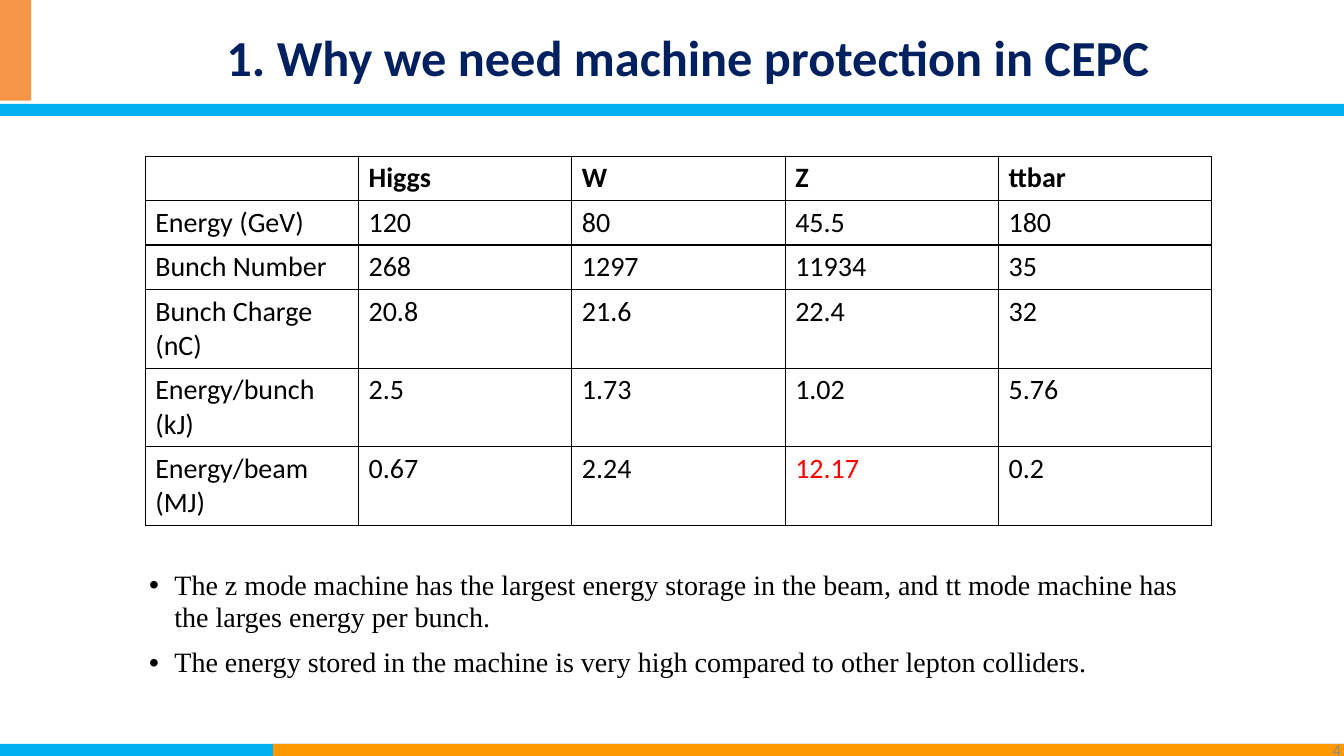
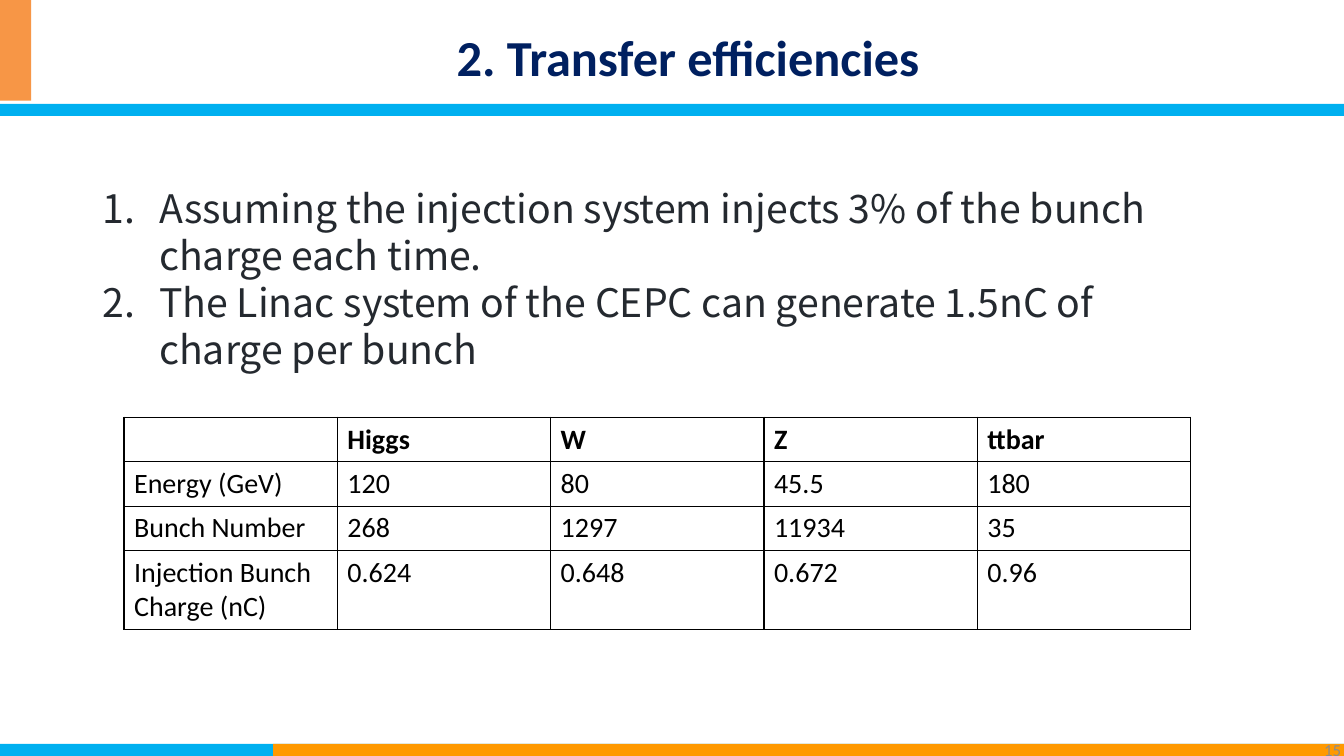
from dataclasses import dataclass

from lxml import etree
from pptx import Presentation
from pptx.dml.color import RGBColor
from pptx.enum.shapes import MSO_SHAPE
from pptx.enum.text import MSO_ANCHOR, MSO_AUTO_SIZE, PP_ALIGN
from pptx.oxml.ns import qn
from pptx.util import Inches, Pt

RECTANGLE = MSO_SHAPE.RECTANGLE
TOP, MIDDLE = MSO_ANCHOR.TOP, MSO_ANCHOR.MIDDLE
LEFT, CENTER, RIGHT = PP_ALIGN.LEFT, PP_ALIGN.CENTER, PP_ALIGN.RIGHT
NO_AUTOFIT = MSO_AUTO_SIZE.NONE


@dataclass(frozen=True)
class Theme:
    blue: str = "00B0F0"
    orange: str = "FF9900"
    accent: str = "F79646"
    navy: str = "002060"
    slate: str = "24292F"
    grey: str = "8C8C8C"
    black: str = "000000"
    red: str = "FF0000"
    sans: str = "Calibri"
    serif: str = "Times New Roman"
    wide: str = "Noto Sans CJK SC"
    title_size: int = 36
    list_size: int = 28
    text_size: int = 20
    number_size: int = 12
    border: float = 1


THEME = Theme()

# Content
MODES = ["", "Higgs", "W", "Z", "ttbar"]
COMMON_ROWS = [
    MODES,
    ["Energy (GeV)", "120", "80", "45.5", "180"],
    ["Bunch Number", "268", "1297", "11934", "35"],
]
SLIDES = [
    {
        "title": "1. Why we need machine protection in CEPC",
        "number": "4",
        "table_at": (1.44, 1.55),
        "rows": COMMON_ROWS + [
            ["Bunch Charge (nC)", "20.8", "21.6", "22.4", "32"],
            ["Energy/bunch (kJ)", "2.5", "1.73", "1.02", "5.76"],
            ["Energy/beam (MJ)", "0.67", "2.24", "12.17", "0.2"],
        ],
        "highlight": "12.17",
        "list_at": (1.38, 5.6, 10.58, 1.45),
        "items": [
            "The z mode machine has the largest energy storage in the beam, "
            "and tt mode machine has the larges energy per bunch.",
            "The energy stored in the machine is very high compared to "
            "other lepton colliders.",
        ],
        "list_style": {
            "font": THEME.serif, "size": THEME.text_size, "color": THEME.black,
            "indent": 0.25, "line": 0.95, "gap": 10,
            "marker": ("a:buChar", {"char": "•"}), "marker_font": "Arial",
        },
    },
    {
        "title": "2. Transfer efficiencies",
        "number": "15",
        "table_at": (1.23, 4.14),
        "rows": COMMON_ROWS + [
            ["Injection Bunch Charge (nC)", "0.624", "0.648", "0.672", "0.96"],
        ],
        "highlight": None,
        "list_at": (0.92, 1.78, 11.03, 2.2),
        "items": [
            "Assuming the injection system injects 3% of the bunch charge each time.",
            "The Linac system of the CEPC can generate 1.5nC of charge per bunch",
        ],
        "list_style": {
            "font": THEME.wide, "size": THEME.list_size, "color": THEME.slate,
            "indent": 0.56, "line": Pt(33.6), "gap": 0,
            "marker": ("a:buAutoNum", {"type": "arabicPeriod"}),
            "marker_font": THEME.wide,
        },
    },
]

# Shared geometry, in inches
PAGE_WIDTH, PAGE_HEIGHT = 13.33, 7.5
BAND = 0.12
BANDS = [
    (0, PAGE_HEIGHT - BAND, PAGE_WIDTH, BAND, THEME.blue),
    (2.71, PAGE_HEIGHT - BAND, PAGE_WIDTH - 2.71, BAND, THEME.orange),
    (0, 1.03, PAGE_WIDTH, BAND, THEME.blue),
    (0, 0, 0.31, 1, THEME.accent),
]
TITLE_AT = (1.39, 0.21, 10.87, 0.71)
NUMBER_AT = (12.89, 7.24, 0.51, 0.4)
TABLE_WIDTH = 10.58
ONE_LINE, TWO_LINES = 0.44, 0.77
LONGEST_LINE = 14  # characters that fit in a label cell


def inches(values):
    return [Inches(value) for value in values]


def place(shape, at):
    shape.left, shape.top, shape.width, shape.height = inches(at)


def add_span(para, text, font, size, color, bold=False):
    span = para.add_run()
    span.text = text
    span.font.name = font
    span.font.size = Pt(size)
    span.font.bold = bold
    span.font.color.rgb = RGBColor.from_string(color)


def set_frame(frame, anchor):
    frame.word_wrap = True
    frame.auto_size = NO_AUTOFIT
    frame.vertical_anchor = anchor


def add_bands(page, layout):
    """Draw the bands and keep them on the layout, behind its placeholders."""
    for index, (*at, color) in enumerate(BANDS):
        band = page.shapes.add_shape(RECTANGLE, *inches(at))
        band.shadow.inherit = False
        band.fill.solid()
        band.fill.fore_color.rgb = RGBColor.from_string(color)
        band.line.fill.background()
        layout.shapes.element.insert(2 + index, band.element)


def add_title(page, text):
    title = page.shapes.title
    place(title, TITLE_AT)
    set_frame(title.text_frame, TOP)
    para = title.text_frame.paragraphs[0]
    para.alignment = CENTER
    add_span(para, text, THEME.sans, THEME.title_size, THEME.navy, True)


def add_number(page, text):
    box = page.shapes.add_textbox(*inches(NUMBER_AT))
    set_frame(box.text_frame, MIDDLE)
    para = box.text_frame.paragraphs[0]
    para.alignment = RIGHT
    add_span(para, text, THEME.sans, THEME.number_size, THEME.grey)


def add_list(page, at, items, style):
    body = page.placeholders[1]
    place(body, at)
    frame = body.text_frame
    set_frame(frame, TOP)
    for index, item in enumerate(items):
        para = frame.add_paragraph() if index else frame.paragraphs[0]
        para.alignment = LEFT
        para.line_spacing = style["line"]
        para.space_before = Pt(style["gap"] if index else 0)
        para.space_after = Pt(0)
        # Hanging indent and marker
        props = para._p.get_or_add_pPr()
        indent = Inches(style["indent"])
        props.set("marL", str(indent))
        props.set("indent", str(-indent))
        etree.SubElement(props, qn("a:buFont"), typeface=style["marker_font"])
        tag, attributes = style["marker"]
        etree.SubElement(props, qn(tag), attributes)
        add_span(para, item, style["font"], style["size"], style["color"])


def set_borders(cell):
    props = cell._tc.get_or_add_tcPr()
    for side in ("a:lnL", "a:lnR", "a:lnT", "a:lnB"):
        line = etree.SubElement(props, qn(side), w=str(Pt(THEME.border)))
        fill = etree.SubElement(line, qn("a:solidFill"))
        etree.SubElement(fill, qn("a:srgbClr"), val=THEME.black)


def add_data_table(page, at, rows, highlight):
    heights = [TWO_LINES if len(row[0]) > LONGEST_LINE else ONE_LINE for row in rows]
    frame = page.shapes.add_table(
        len(rows), len(MODES), *inches((*at, TABLE_WIDTH, sum(heights))))
    table = frame.table
    table.first_row = table.horz_banding = False
    for column in table.columns:
        column.width = Inches(TABLE_WIDTH / len(MODES))
    for row_index, (values, height) in enumerate(zip(rows, heights)):
        table.rows[row_index].height = Inches(height)
        for column_index, value in enumerate(values):
            cell = table.cell(row_index, column_index)
            set_borders(cell)
            cell.fill.background()
            if value:
                color = THEME.red if value == highlight else THEME.black
                add_span(cell.text_frame.paragraphs[0], value, THEME.sans,
                         THEME.text_size, color, row_index == 0)


def main():
    deck = Presentation()
    deck.slide_width, deck.slide_height = inches((PAGE_WIDTH, PAGE_HEIGHT))
    layout = deck.slide_layouts[1]
    for index, content in enumerate(SLIDES):
        page = deck.slides.add_slide(layout)
        if index == 0:
            add_bands(page, layout)
        add_number(page, content["number"])
        add_title(page, content["title"])
        add_list(page, content["list_at"], content["items"], content["list_style"])
        add_data_table(page, content["table_at"], content["rows"], content["highlight"])
    deck.save("out.pptx")


if __name__ == "__main__":
    main()
